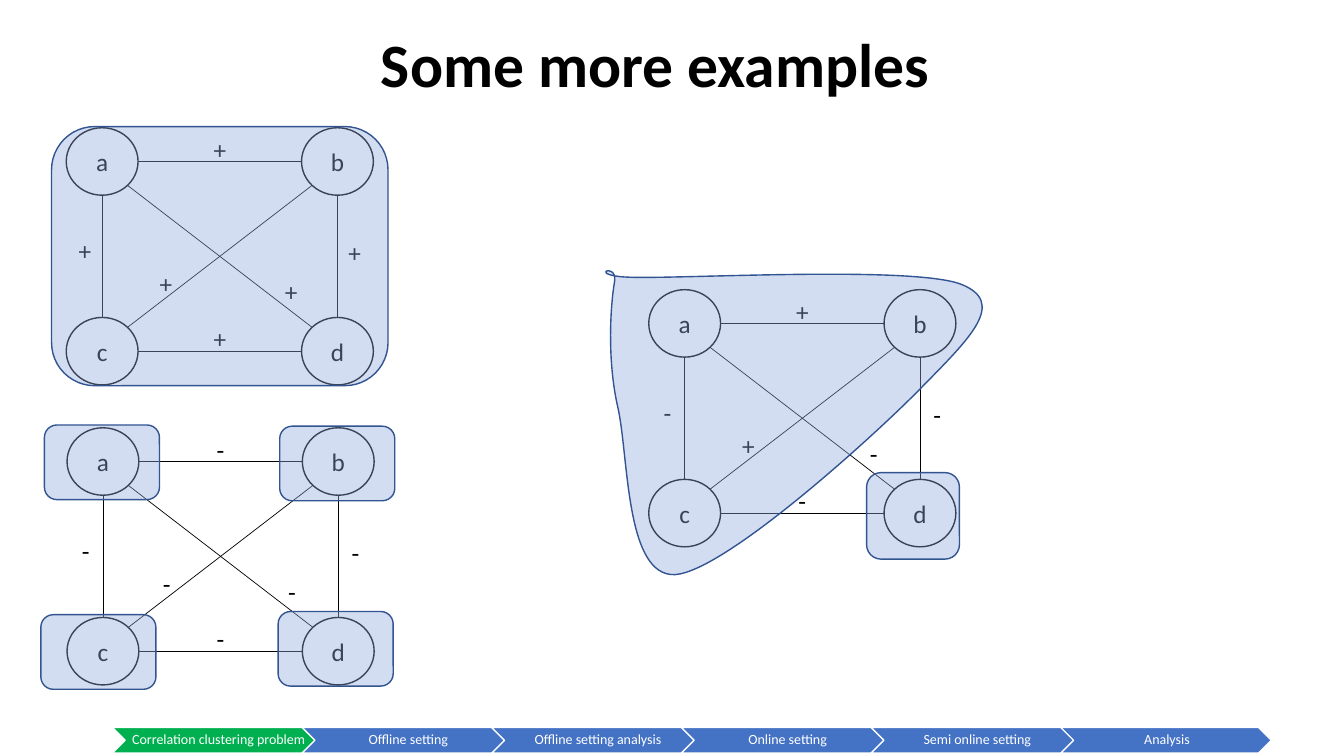
import math
from dataclasses import dataclass

import lxml.etree
import pptx
import pptx.dml.color
import pptx.enum.shapes
import pptx.enum.text
import pptx.oxml.ns
import pptx.util

Cm = pptx.util.Cm
Pt = pptx.util.Pt
qn = pptx.oxml.ns.qn
Shape = pptx.enum.shapes.MSO_SHAPE
Anchor = pptx.enum.text.MSO_ANCHOR


@dataclass(frozen=True)
class Theme:
    font: str = "Calibri"
    ink: str = "000000"
    paper: str = "FFFFFF"
    current_step: str = "00B050"
    step: str = "4472C4"
    cluster: str = "8FAADC"
    cluster_line: str = "325491"
    cluster_alpha: int = 40
    title_size: int = 44
    graph_size: int = 18
    step_size: int = 10
    outline: float = 1
    edge: float = 0.5


THEME = Theme()

STEPS = ["Correlation clustering problem", "Offline setting", "Offline setting analysis",
         "Online setting", "Semi online setting", "Analysis"]

# Grid position (column, row) of each node
NODES = {"a": (0, 0), "b": (1, 0), "c": (0, 1), "d": (1, 1)}
NODE_WIDTH, NODE_HEIGHT = 1.81, 1.7
COLUMN_STEP, ROW_STEP = 5.93, 4.78

# Edge and the place of its sign, in cm from the corner of the graph
EDGES = [("ab", 3.07, 0.04), ("bd", 6.47, 2.63), ("cd", 3.07, 4.81),
         ("ac", -0.33, 2.58), ("cb", 1.71, 3.42), ("ad", 4.87, 3.63)]

# Corner of each graph and the signs in the order of EDGES
GRAPHS = [(1.67, 3.22, "++++++"), (1.69, 10.78, "------"), (16.35, 7.3, "+---+-")]

CLUSTERS = [(1.3, 3.19, 8.48, 6.53),
            (7.01, 15.41, 2.9, 1.88), (1.03, 15.49, 2.9, 1.88),
            (1.12, 10.71, 2.9, 1.88), (7.05, 10.74, 2.9, 1.88),
            (21.84, 11.91, 2.34, 2.18)]

# Closed cubic curve round a, b and c: two controls and an end point per row
BLOB_FRAME = (15.27, 6.83, 9.47, 7.65)
BLOB_START = (15.49, 7.09)
BLOB_CURVES = [((15.57, 6.55), (14.63, 6.99), (16.08, 6.99)),
               ((17.55, 7.01), (23.01, 6.71), (24.21, 7.16)),
               ((25.4, 7.62), (24.43, 8.53), (23.24, 9.75)),
               ((22.05, 10.97), (18.29, 14.38), (17.02, 14.48)),
               ((15.75, 14.55), (15.85, 11.48), (15.57, 10.26)),
               ((15.29, 9.04), (15.39, 7.65), BLOB_START)]


def colour(code):
    return pptx.dml.color.RGBColor.from_string(code)


def write(shape, text, size, ink=THEME.ink, bold=False, anchor=Anchor.MIDDLE):
    frame = shape.text_frame
    frame.text = text
    frame.word_wrap = True
    frame.vertical_anchor = anchor
    para = frame.paragraphs[0]
    para.alignment = pptx.enum.text.PP_ALIGN.CENTER
    span = para.runs[0]
    span.font.name = THEME.font
    span.font.size = Pt(size)
    span.font.bold = bold
    span.font.color.rgb = colour(ink)
    return para


def paint(shape, fill, line):
    shape.shadow.inherit = False
    if fill:
        shape.fill.solid()
        shape.fill.fore_color.rgb = colour(fill)
    else:
        shape.fill.background()
    shape.line.color.rgb = colour(line)
    shape.line.width = Pt(THEME.outline)


def paint_cluster(shape):
    paint(shape, THEME.cluster, THEME.cluster_line)
    tone = shape._element.spPr.find(qn("a:solidFill")).find(qn("a:srgbClr"))
    alpha = lxml.etree.SubElement(tone, qn("a:alpha"))
    alpha.set("val", str(THEME.cluster_alpha * 1000))


def add_title(page, text):
    box = page.shapes.add_textbox(Cm(1.91), Cm(0.64), Cm(29.21), Cm(2.13))
    write(box, text, THEME.title_size, bold=True).line_spacing = 0.9


def add_progress_bar(page, steps, current):
    bar = page.shapes.add_group_shape()
    top, height = Cm(18.33), Cm(0.65)
    for index, step in enumerate(steps):
        left = 2.83 + 4.78 * index
        chevron = bar.shapes.add_shape(Shape.CHEVRON, Cm(left), top, Cm(5.31), height)
        paint(chevron, THEME.current_step if step == current else THEME.step, THEME.paper)
        box = bar.shapes.add_textbox(Cm(left + 0.32), top, Cm(4.65), height)
        write(box, step, THEME.step_size, THEME.paper).line_spacing = 0.9
        frame = box.text_frame
        frame.margin_left = Cm(0.1)
        frame.margin_top = frame.margin_right = frame.margin_bottom = Cm(0.03)


def add_node(page, name, left, top):
    column, row = NODES[name]
    node = page.shapes.add_shape(Shape.OVAL, Cm(left + column * COLUMN_STEP),
                                 Cm(top + row * ROW_STEP), Cm(NODE_WIDTH), Cm(NODE_HEIGHT))
    paint(node, None, THEME.ink)
    write(node, name, THEME.graph_size)


def rim_point(name, other, left, top):
    """Point on the rim of a node, on the side that faces another node."""
    column, row = NODES[name]
    across, down = NODES[other][0] - column, NODES[other][1] - row
    reach = math.hypot(across, down)
    return (Cm(left + column * COLUMN_STEP + NODE_WIDTH / 2 * (1 + across / reach)),
            Cm(top + row * ROW_STEP + NODE_HEIGHT / 2 * (1 + down / reach)))


def add_edge(page, first, second, left, top):
    edge = page.shapes.add_connector(pptx.enum.shapes.MSO_CONNECTOR.STRAIGHT,
                                     *rim_point(first, second, left, top),
                                     *rim_point(second, first, left, top))
    edge.line.color.rgb = colour(THEME.ink)
    edge.line.width = Pt(THEME.edge)
    lxml.etree.SubElement(edge._element.spPr, qn("a:effectLst"))


def add_sign(page, sign, left, top):
    box = page.shapes.add_textbox(Cm(left), Cm(top), Cm(1.6), Cm(1.02))
    write(box, sign, THEME.graph_size, anchor=Anchor.TOP)
    box.text_frame.auto_size = pptx.enum.text.MSO_AUTO_SIZE.SHAPE_TO_FIT_TEXT


def add_graph(page, left, top, signs):
    for name in NODES:
        add_node(page, name, left, top)
    for ((first, second), across, down), sign in zip(EDGES, signs):
        add_edge(page, first, second, left, top)
        add_sign(page, sign, left + across, top + down)


def add_cluster(page, left, top, width, height):
    paint_cluster(page.shapes.add_shape(Shape.ROUNDED_RECTANGLE, Cm(left), Cm(top),
                                        Cm(width), Cm(height)))


def add_blob(page, frame, start, curves):
    """Closed freeform whose straight segments are turned into cubic curves."""
    left, top, width, height = map(Cm, frame)
    builder = page.shapes.build_freeform(Cm(start[0]), Cm(start[1]))
    builder.add_line_segments([(Cm(x), Cm(y)) for *_, (x, y) in curves], close=True)
    blob = builder.convert_to_shape()
    blob.left, blob.top, blob.width, blob.height = left, top, width, height

    outline = next(blob._element.iter(qn("a:path")))
    outline.set("w", str(width))
    outline.set("h", str(height))
    for segment in list(outline):
        outline.remove(segment)
    for tag, points in [("a:moveTo", [start]), *(("a:cubicBezTo", curve) for curve in curves)]:
        segment = lxml.etree.SubElement(outline, qn(tag))
        for x, y in points:
            point = lxml.etree.SubElement(segment, qn("a:pt"))
            point.set("x", str(Cm(x) - left))
            point.set("y", str(Cm(y) - top))
    lxml.etree.SubElement(outline, qn("a:close"))
    paint_cluster(blob)


def main():
    deck = pptx.Presentation()
    deck.slide_width, deck.slide_height = Cm(33.87), Cm(19.05)
    page = deck.slides.add_slide(deck.slide_layouts[6])
    add_title(page, "Some more examples")
    add_progress_bar(page, STEPS, STEPS[0])
    for graph in GRAPHS:
        add_graph(page, *graph)
    add_blob(page, BLOB_FRAME, BLOB_START, BLOB_CURVES)
    for cluster in CLUSTERS:
        add_cluster(page, *cluster)
    deck.save("out.pptx")


if __name__ == "__main__":
    main()
